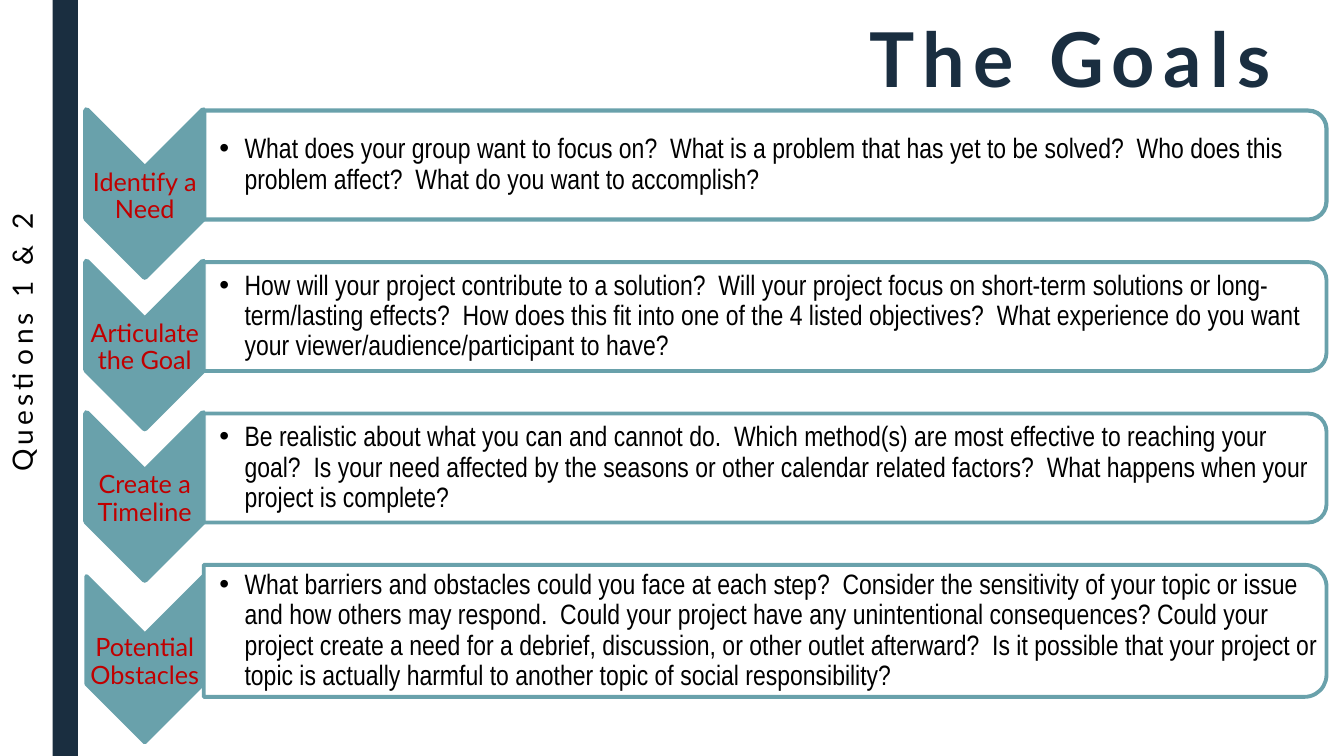
from dataclasses import dataclass

from lxml import etree
from pptx import Presentation
from pptx.dml.color import RGBColor
from pptx.enum.shapes import MSO_SHAPE
from pptx.enum.text import MSO_ANCHOR, PP_ALIGN
from pptx.oxml.ns import qn
from pptx.shapes.autoshape import Shape
from pptx.slide import Slide
from pptx.util import Pt

RECTANGLE = MSO_SHAPE.RECTANGLE
CHEVRON = MSO_SHAPE.CHEVRON
ROUND_TOP = MSO_SHAPE.ROUND_2_SAME_RECTANGLE
TOP, MIDDLE = MSO_ANCHOR.TOP, MSO_ANCHOR.MIDDLE
LEFT, CENTER, RIGHT = PP_ALIGN.LEFT, PP_ALIGN.CENTER, PP_ALIGN.RIGHT

COLORS = {
    "navy": "1A2E40",
    "teal": "69A1AB",
    "red": "C00000",
    "black": "000000",
    "white": "FFFFFF",
}
HEADING_FONT = "Lato"
BODY_FONT = "Arial Narrow"

FIRST_CENTER = 138.2
STAGE_PITCH = 108.2
CHEVRON_X = 103.4
PANEL_X = 546.5
PANEL_RISE = 20.3


@dataclass(frozen=True)
class Box:
    left: float
    top: float
    width: float
    height: float

    @classmethod
    def centered(cls, x: float, y: float, width: float, height: float) -> "Box":
        return cls(x - width / 2, y - height / 2, width, height)

    def lengths(self) -> tuple[Pt, Pt, Pt, Pt]:
        return Pt(self.left), Pt(self.top), Pt(self.width), Pt(self.height)


@dataclass(frozen=True)
class TextStyle:
    font: str
    size: float
    color: str
    bold: bool = False
    align: PP_ALIGN = LEFT
    anchor: MSO_ANCHOR = TOP
    line_spacing: float = 1.0
    letter_spacing: float = 0
    insets: tuple[float, float, float, float] = (7.2, 3.6, 7.2, 3.6)


@dataclass(frozen=True)
class Stage:
    label: str
    questions: str
    drop: float = 0
    panel_height: float = 77.8
    questions_height: float = 69.8
    chevron_line: float = 4.5
    panel_line: float = 2.75
    panel_filled: bool = True


TITLE = TextStyle(HEADING_FONT, 54, "navy", True, RIGHT, MIDDLE, 0.89, 6)
SIDE = TextStyle(HEADING_FONT, 20, "black", letter_spacing=3)
LABEL = TextStyle(HEADING_FONT, 18, "red", align=CENTER, line_spacing=0.9,
                  insets=(0.7, 0.7, 0.7, 0.7))
QUESTIONS = TextStyle(BODY_FONT, 20, "black", anchor=MIDDLE, line_spacing=0.9,
                      insets=(11.2, 0.7, 0.7, 0.7))

STAGES = [
    Stage(
        "Identify a Need",
        "What does your group want to focus on?  What is a problem that has yet "
        "to be solved?  Who does this problem affect?  What do you want to accomplish?",
        panel_line=3,
        panel_filled=False,
    ),
    Stage(
        "Articulate the Goal",
        "How will your project contribute to a solution?  Will your project focus on "
        "short-term solutions or long-term/lasting effects?  How does this fit into "
        "one of the 4 listed objectives?  What experience do you want your "
        "viewer/audience/participant to have?",
    ),
    Stage(
        "Create a Timeline",
        "Be realistic about what you can and cannot do.  Which method(s) are most "
        "effective to reaching your goal?  Is your need affected by the seasons or "
        "other calendar related factors?  What happens when your project is complete?",
    ),
    Stage(
        "Potential Obstacles",
        "What barriers and obstacles could you face at each step?  Consider the "
        "sensitivity of your topic or issue and how others may respond.  Could your "
        "project have any unintentional consequences? Could your project create a need "
        "for a debrief, discussion, or other outlet afterward?  Is it possible that "
        "your project or topic is actually harmful to another topic of social "
        "responsibility?",
        drop=8.1,
        panel_height=94.3,
        questions_height=85,
        chevron_line=2.75,
    ),
]


def rgb(name: str) -> RGBColor:
    return RGBColor.from_string(COLORS[name])


def add_figure(slide: Slide, kind: MSO_SHAPE, box: Box, fill: str | None,
               line: str | None = None, line_width: float = 0,
               rotation: float = 0) -> Shape:
    figure = slide.shapes.add_shape(kind, *box.lengths())
    figure.shadow.inherit = False
    figure.rotation = rotation
    if fill:
        figure.fill.solid()
        figure.fill.fore_color.rgb = rgb(fill)
    else:
        figure.fill.background()
    if line:
        figure.line.color.rgb = rgb(line)
        figure.line.width = Pt(line_width)
    else:
        figure.line.fill.background()
    return figure


def set_opacity(figure: Shape, percent: int) -> None:
    color = figure._element.spPr.find(f"{qn('a:solidFill')}/{qn('a:srgbClr')}")
    etree.SubElement(color, qn("a:alpha")).set("val", str(percent * 1000))


def add_text(slide: Slide, text: str, box: Box, style: TextStyle) -> Shape:
    text_box = slide.shapes.add_textbox(*box.lengths())
    frame = text_box.text_frame
    frame.word_wrap = True
    frame.vertical_anchor = style.anchor
    (frame.margin_left, frame.margin_top,
     frame.margin_right, frame.margin_bottom) = map(Pt, style.insets)
    frame.text = text
    paragraph = frame.paragraphs[0]
    paragraph.alignment = style.align
    paragraph.line_spacing = style.line_spacing
    run = paragraph.runs[0]
    run.font.name = style.font
    run.font.size = Pt(style.size)
    run.font.bold = style.bold
    run.font.color.rgb = rgb(style.color)
    if style.letter_spacing:
        run._r.get_or_add_rPr().set("spc", str(round(style.letter_spacing * 100)))
    return text_box


def add_bullet(text_box: Shape, indent: float) -> None:
    properties = text_box.text_frame.paragraphs[0]._p.get_or_add_pPr()
    properties.set("marL", str(Pt(indent)))
    properties.set("indent", str(-Pt(indent)))
    etree.SubElement(properties, qn("a:buFont")).set("typeface", "Arial")
    etree.SubElement(properties, qn("a:buChar")).set("char", "•")


def add_stage(slide: Slide, stage: Stage, center: float) -> None:
    panel_center = center - PANEL_RISE
    add_figure(slide, CHEVRON, Box.centered(CHEVRON_X, center, 118.8, 83.4),
               "teal", "teal", stage.chevron_line, 90)
    add_text(slide, stage.label, Box.centered(CHEVRON_X, center, 83.4, 36), LABEL)
    panel = add_figure(
        slide, ROUND_TOP,
        Box.centered(PANEL_X, panel_center, stage.panel_height, 802),
        "white" if stage.panel_filled else None, "teal", stage.panel_line, 90)
    if stage.panel_filled:
        set_opacity(panel, 90)
    questions_box = Box(145.5, panel_center - stage.questions_height / 2,
                        798.4, stage.questions_height)
    add_bullet(add_text(slide, stage.questions, questions_box, QUESTIONS), 18)


def main() -> None:
    presentation = Presentation()
    presentation.slide_width = Pt(960)
    presentation.slide_height = Pt(540)
    slide = presentation.slides.add_slide(presentation.slide_layouts[6])

    add_figure(slide, RECTANGLE, Box(37.6, 0, 18, 540), "navy")
    add_text(slide, "The Goals", Box(154.8, 11.5, 760.3, 67), TITLE)
    for index, stage in enumerate(STAGES):
        add_stage(slide, stage, FIRST_CENTER + index * STAGE_PITCH + stage.drop)
    side = add_text(slide, "Questions 1 & 2", Box(0, 118.8, 38.9, 225.4), SIDE)
    side.text_frame._txBody.bodyPr.set("vert", "vert270")
    presentation.save("out.pptx")


if __name__ == "__main__":
    main()
